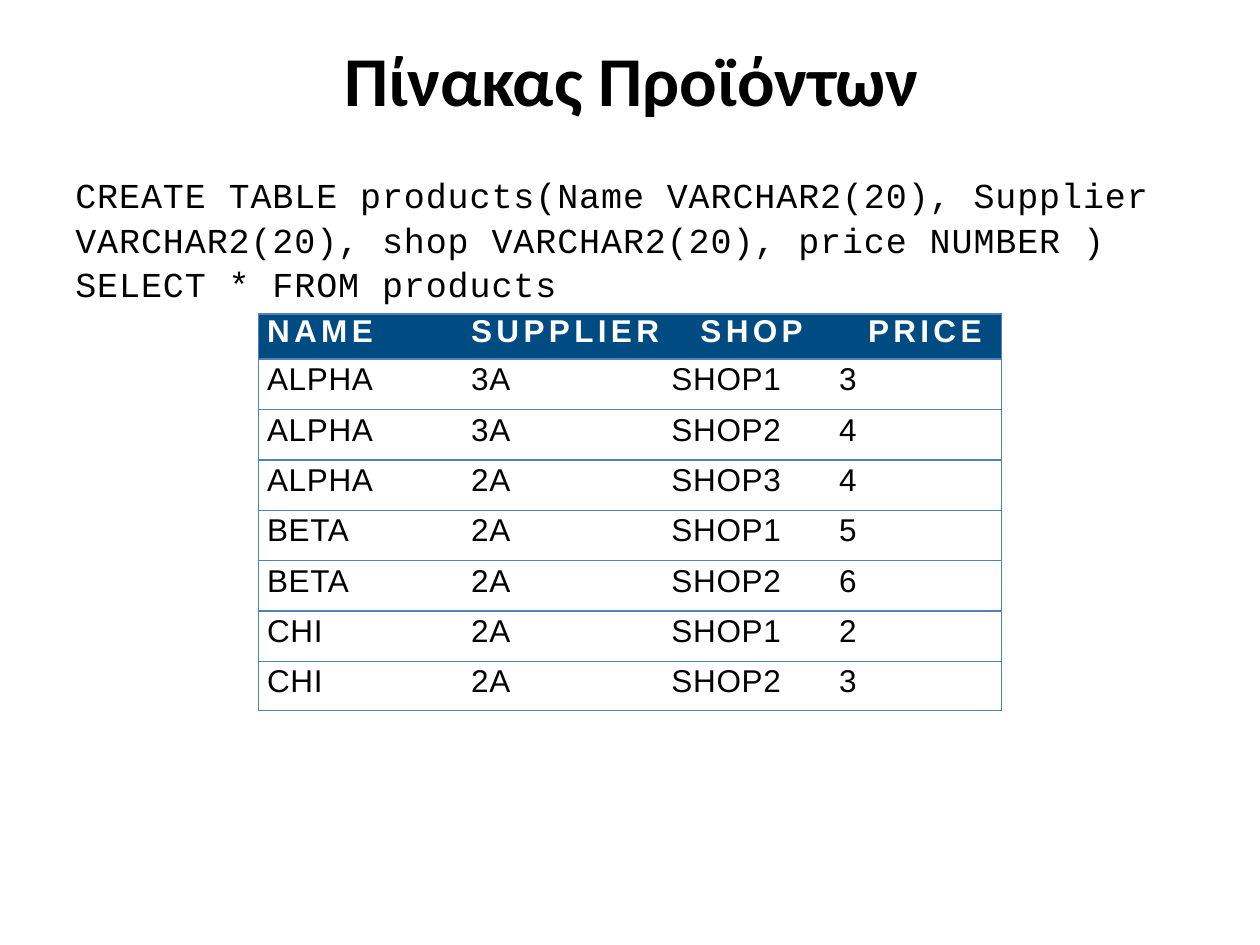
from dataclasses import dataclass
from typing import Any

from lxml.etree import SubElement
from pptx import Presentation
from pptx.dml.color import RGBColor
from pptx.enum.text import MSO_ANCHOR as Anchor, PP_ALIGN as Align
from pptx.oxml.ns import qn
from pptx.util import Inches, Pt

NO_STYLE = "{2D5ABB26-0587-4C30-8999-92F81FD0307C}"
BLACK, WHITE, NAVY, BLUE = "000000", "FFFFFF", "004B82", "4F81BD"
COLS = (1.62, 1.62, 1.33, 1.33)
ROWS = (0.36, *[0.4] * 6, 0.39)
DATA = (
    ("NAME", "SUPPLIER", "SHOP", "PRICE"),
    ("ALPHA", "3A", "SHOP1", "3"),
    ("ALPHA", "3A", "SHOP2", "4"),
    ("ALPHA", "2A", "SHOP3", "4"),
    ("BETA", "2A", "SHOP1", "5"),
    ("BETA", "2A", "SHOP2", "6"),
    ("CHI", "2A", "SHOP1", "2"),
    ("CHI", "2A", "SHOP2", "3"),
)


@dataclass(frozen=True)
class Face:
    name: str
    size: int
    color: str = BLACK
    bold: bool = False
    track: float = 0


@dataclass(frozen=True)
class Band:
    """Look of one kind of table row."""
    face: Face
    fill: str
    lead: float
    dents: tuple[float, ...]


HEAD = Band(Face("Arial", 18, WHITE, True, 2.5), NAVY, 14.5, (0.06, 0.06, 0.26, 0.26))
BODY = Band(Face("Arial", 18, track=0.4), WHITE, 15, (0.06, 0.06, 0.03, 0.03))


def rgb(code: str) -> RGBColor:
    return RGBColor.from_string(code)


def assign(obj: Any, **values: Any) -> None:
    for key, value in values.items():
        setattr(obj, key, value)


def write(para: Any, text: str, face: Face) -> None:
    run = para.add_run()
    run.text = text
    assign(run.font, name=face.name, size=Pt(face.size), bold=face.bold)
    run.font.color.rgb = rgb(face.color)
    if face.track:
        run.font._element.set("spc", str(round(face.track * 100)))


def add_text(slide: Any, box: tuple[float, ...], text: str, face: Face,
             anchor: Any, **layout: Any) -> None:
    frame = slide.shapes.add_textbox(*map(Inches, box)).text_frame
    assign(frame, word_wrap=True, vertical_anchor=anchor)
    para = frame.paragraphs[0]
    assign(para, **layout)
    write(para, text, face)


def rule(cell: Any, sides: str) -> None:
    """Draw the named sides (L, R, T, B) and clear the others."""
    props = cell._tc.get_or_add_tcPr()
    for spot, side in enumerate("LRTB"):
        line = SubElement(props, qn(f"a:ln{side}"), w=str(Pt(1)))
        props.insert(spot, line)
        if side in sides:
            fill = SubElement(line, qn("a:solidFill"))
            SubElement(fill, qn("a:srgbClr"), val=BLUE)
        else:
            SubElement(line, qn("a:noFill"))


def fill_cell(cell: Any, text: str, band: Band, col: int) -> None:
    assign(cell, vertical_anchor=Anchor.MIDDLE, margin_top=0, margin_bottom=0,
           margin_left=Inches(0.01), margin_right=Inches(0.01))
    cell.fill.solid()
    cell.fill.fore_color.rgb = rgb(band.fill)
    para = cell.text_frame.paragraphs[0]
    para.line_spacing = Pt(band.lead)
    para._p.get_or_add_pPr().set("marL", str(Inches(band.dents[col])))
    write(para, text, band.face)
    rule(cell, "TB" + {0: "L", len(COLS) - 1: "R"}.get(col, ""))


def add_grid(slide: Any, left: float, top: float) -> None:
    size = (left, top, sum(COLS), sum(ROWS))
    table = slide.shapes.add_table(len(ROWS), len(COLS), *map(Inches, size)).table
    assign(table, first_row=False, horz_banding=False)
    table._tbl.tblPr.find(qn("a:tableStyleId")).text = NO_STYLE
    for col, width in zip(table.columns, COLS):
        col.width = Inches(width)
    for row, height in zip(table.rows, ROWS):
        row.height = Inches(height)
    for r, texts in enumerate(DATA):
        for c, text in enumerate(texts):
            fill_cell(table.cell(r, c), text, BODY if r else HEAD, c)


def main() -> None:
    deck = Presentation()
    assign(deck, slide_width=Inches(10), slide_height=Inches(7.5))
    slide = deck.slides.add_slide(deck.slide_layouts[6])
    add_text(slide, (0.51, 0.13, 9, 0.99), "Πίνακας Προϊόντων",
             Face("Calibri", 40, bold=True), Anchor.MIDDLE, alignment=Align.CENTER)
    add_text(slide, (0.5, 1.31, 9, 1.26),
             "CREATE TABLE products(Name VARCHAR2(20), Supplier VARCHAR2(20), "
             "shop VARCHAR2(20), price NUMBER ) SELECT * FROM products",
             Face("Courier New", 20, track=0.5), Anchor.TOP,
             space_before=Pt(3), line_spacing=1.06)
    add_grid(slide, 2.05, 2.49)
    deck.save("out.pptx")


if __name__ == "__main__":
    main()
